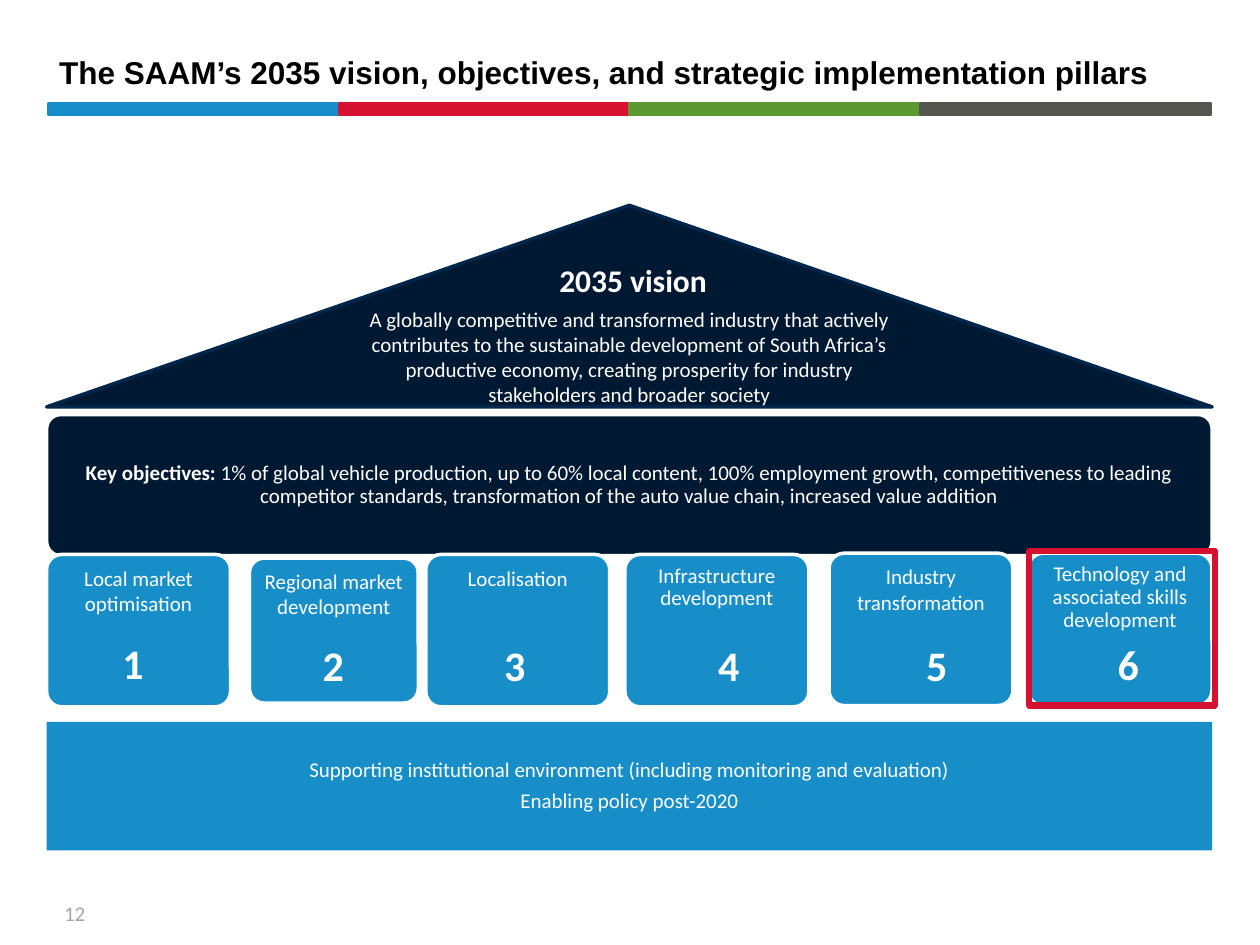
from dataclasses import dataclass
from pptx import Presentation
from pptx.dml.color import RGBColor
from pptx.enum.shapes import MSO_SHAPE
from pptx.enum.text import MSO_ANCHOR, PP_ALIGN
from pptx.util import Inches, Pt


@dataclass(frozen=True)
class Theme:
    blue: str = "178EC8"
    red: str = "D51030"
    green: str = "5D9933"
    stone: str = "555550"
    navy: str = "001933"
    edge: str = "00264B"
    white: str = "FFFFFF"
    black: str = "000000"
    pale: str = "A6A6A6"
    small: int = 12
    large: int = 18
    huge: int = 24


theme = Theme()


def write(shape, text, size=theme.small, color=theme.white, font="Calibri", bold=False,
          lead="", align=PP_ALIGN.CENTER, anchor=MSO_ANCHOR.TOP, inset=None, tight=False):
    frame = shape.text_frame
    frame.word_wrap = True
    frame.vertical_anchor = anchor
    if inset is not None:
        frame.margin_left = frame.margin_right = Inches(inset)
        frame.margin_top = frame.margin_bottom = Inches(inset)
    for index, line in enumerate(text.split("\n")):
        para = frame.add_paragraph() if index else frame.paragraphs[0]
        para.alignment = align
        if tight:
            para.line_spacing = 0.9
            para.space_after = Pt(5)
        parts = [(lead, True), (line, bold)] if lead else [(line, bold)]
        for words, heavy in parts:
            run = para.add_run()
            run.text = words
            run.font.name = font
            run.font.size = Pt(size)
            run.font.bold = heavy
            run.font.color.rgb = RGBColor.from_string(color)


def draw(kind, left, top, width, height, fill=None, line=None, weight=2):
    shape = slide.shapes.add_shape(kind, Inches(left), Inches(top), Inches(width), Inches(height))
    shape.shadow.inherit = False
    if fill:
        shape.fill.solid()
        shape.fill.fore_color.rgb = RGBColor.from_string(fill)
    else:
        shape.fill.background()
    if line:
        shape.line.color.rgb = RGBColor.from_string(line)
        shape.line.width = Pt(weight)
    else:
        shape.line.fill.background()
    if kind == MSO_SHAPE.ROUNDED_RECTANGLE:
        shape.adjustments[0] = 0.1
    return shape


deck = Presentation()
deck.slide_width, deck.slide_height = Inches(10), Inches(7.5)
slide = deck.slides.add_slide(deck.slide_layouts[5])
edge, span = 0.37, 9.25

for index, color in enumerate((theme.blue, theme.red, theme.green, theme.stone)):
    draw(MSO_SHAPE.RECTANGLE, 0.39 + index * 2.305, 0.82, 2.3, 0.09, color, color)

title = slide.shapes.title
title.left, title.top = Inches(edge), Inches(0.08)
title.width, title.height = Inches(span), Inches(0.69)
write(title, "The SAAM’s 2035 vision, objectives, and strategic implementation pillars",
      size=theme.large, color=theme.black, font="Arial", bold=True,
      align=PP_ALIGN.LEFT, anchor=MSO_ANCHOR.BOTTOM)

page = slide.shapes.add_textbox(Inches(0.41), Inches(7.1), Inches(2.42), Inches(0.4))
write(page, "12", color=theme.pale, align=PP_ALIGN.LEFT)

goals = draw(MSO_SHAPE.ROUNDED_RECTANGLE, edge, 3.29, span, 1.12, theme.navy, theme.white)
write(goals, "1% of global vehicle production, up to 60% local content, 100% employment growth, "
      "competitiveness to leading competitor standards, transformation of the auto value chain, "
      "increased value addition",
      lead="Key objectives: ", anchor=MSO_ANCHOR.MIDDLE, inset=0.05, tight=True)

pillars = [
    ("Local market optimisation", 0.37, 4.4, 1.46, 1.21, False, 0.74, 5.01),
    ("Regional market development", 1.98, 4.43, 1.34, 1.15, False, 2.33, 5.03),
    ("Localisation", 3.38, 4.4, 1.46, 1.21, False, 3.77, 5.03),
    ("Infrastructure development", 4.96, 4.4, 1.46, 1.21, True, 5.47, 5.03),
    ("Industry transformation", 6.58, 4.39, 1.46, 1.21, False, 7.12, 5.03),
    ("Technology and associated skills development", 8.16, 4.39, 1.46, 1.21, True, 8.64, 5.02),
]
for count, (name, left, top, width, height, tight, x, y) in enumerate(pillars, 1):
    pillar = draw(MSO_SHAPE.ROUNDED_RECTANGLE, left, top, width, height, theme.blue, theme.white)
    write(pillar, name, inset=0.05, tight=tight)
    digit = slide.shapes.add_textbox(Inches(x), Inches(y), Inches(0.63), Inches(0.5))
    write(digit, str(count), size=theme.huge, bold=True)

base = draw(MSO_SHAPE.RECTANGLE, edge, 5.73, span, 1.02, theme.blue)
write(base, "Supporting institutional environment (including monitoring and evaluation)\n"
      "Enabling policy post-2020", anchor=MSO_ANCHOR.MIDDLE, inset=0.06, tight=True)

roof = draw(MSO_SHAPE.ISOSCELES_TRIANGLE, edge, 1.63, span, 1.6, theme.navy, theme.edge)
write(roof, "A globally competitive and transformed industry that actively contributes to the "
      "sustainable development of South Africa’s productive economy, creating prosperity for "
      "industry stakeholders and broader society", anchor=MSO_ANCHOR.MIDDLE)

vision = slide.shapes.add_textbox(Inches(4.27), Inches(2.02), Inches(1.51), Inches(0.4))
write(vision, "2035 vision", size=theme.large, bold=True)

draw(MSO_SHAPE.RECTANGLE, 8.17, 4.37, 1.47, 1.23, line=theme.red, weight=3.5)

deck.save("out.pptx")
